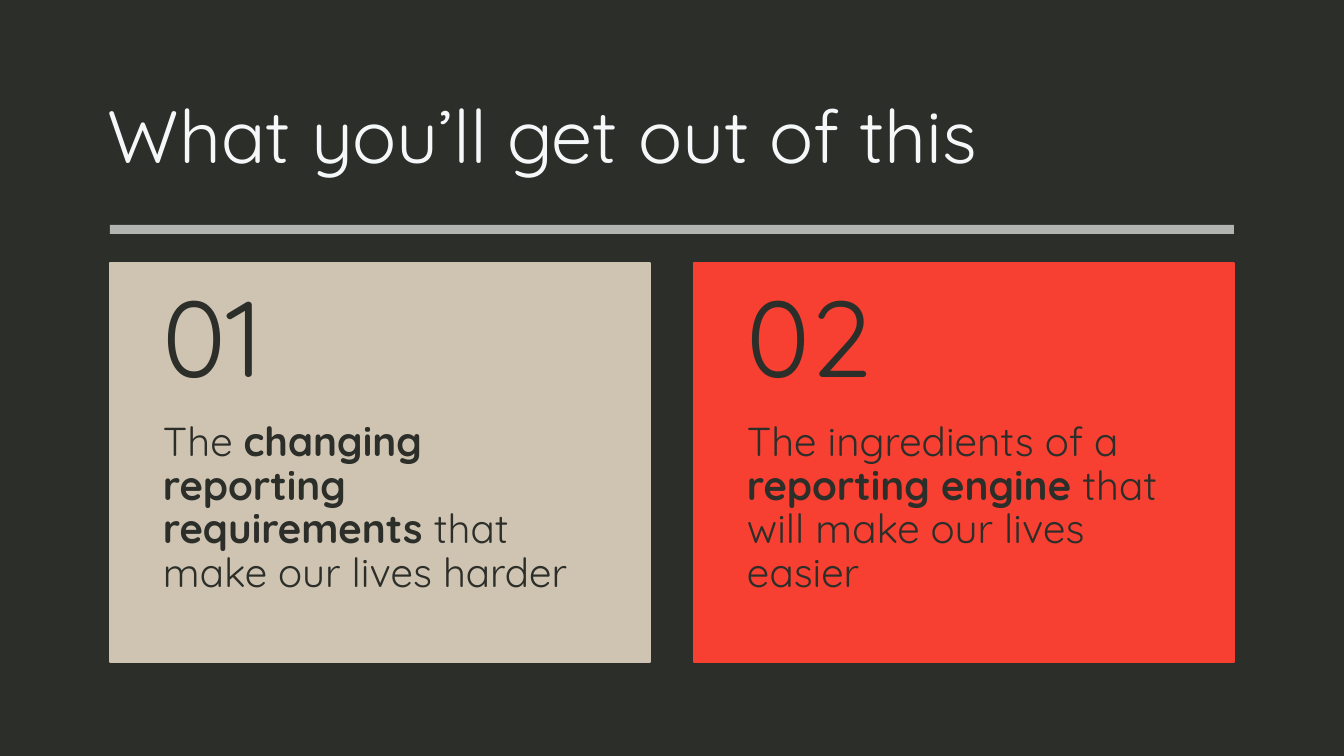
from dataclasses import dataclass

from lxml.etree import SubElement
from pptx import Presentation
from pptx.dml.color import RGBColor
from pptx.enum.shapes import MSO_SHAPE
from pptx.enum.text import MSO_ANCHOR, PP_ALIGN
from pptx.oxml.ns import qn
from pptx.shapes.autoshape import Shape
from pptx.slide import Slide
from pptx.util import Emu, Pt

PX_PER_INCH = 121


@dataclass(frozen=True)
class Theme:
    font: str = "Quicksand"
    dark: str = "2C2E29"
    light: str = "F5F8F9"
    rule: str = "FAFCFC"
    rule_opacity: int = 65
    sand: str = "CFC4B2"
    red: str = "F84032"
    title_size: int = 44
    number_size: int = 64
    body_size: int = 24
    line_spacing: float = 0.9


@dataclass(frozen=True)
class Box:
    left: int
    top: int
    width: int
    height: int


@dataclass(frozen=True)
class Insets:
    left: int
    top: int
    right: int
    bottom: int


@dataclass(frozen=True)
class Words:
    text: str
    bold: bool = False


@dataclass(frozen=True)
class Takeaway:
    number: str
    color: str
    message: tuple[Words, ...]


THEME = Theme()
TITLE_BOX = Box(96, 67, 1153, 146)
RULE_BOX = Box(110, 225, 1124, 9)
FIRST_CARD = Box(110, 263, 540, 399)
CARD_GAP = 44
NUMBER_HEIGHT = 159
TITLE_INSETS = Insets(12, 6, 12, 6)
NUMBER_INSETS = Insets(53, 22, 53, 22)
MESSAGE_INSETS = Insets(53, 0, 53, 44)

TAKEAWAYS = (
    Takeaway("01", THEME.sand, (
        Words("The "),
        Words("changing reporting requirements ", bold=True),
        Words("that make our lives harder"),
    )),
    Takeaway("02", THEME.red, (
        Words("The ingredients of a "),
        Words("reporting engine ", bold=True),
        Words("that will make our lives easier"),
    )),
)


def px(length: int) -> Emu:
    return Emu(round(length * 914400 / PX_PER_INCH))


def edges(box: Box) -> tuple[Emu, Emu, Emu, Emu]:
    return px(box.left), px(box.top), px(box.width), px(box.height)


def add_rectangle(slide: Slide, box: Box, color: str) -> Shape:
    rectangle = slide.shapes.add_shape(MSO_SHAPE.RECTANGLE, *edges(box))
    rectangle.shadow.inherit = False
    rectangle.fill.solid()
    rectangle.fill.fore_color.rgb = RGBColor.from_string(color)
    rectangle.line.fill.background()
    return rectangle


def add_text(slide: Slide, box: Box, insets: Insets, words: tuple[Words, ...],
             size: int, color: str, anchor: MSO_ANCHOR) -> None:
    frame = slide.shapes.add_textbox(*edges(box)).text_frame
    frame.word_wrap = True
    frame.vertical_anchor = anchor
    frame.margin_left, frame.margin_top = px(insets.left), px(insets.top)
    frame.margin_right, frame.margin_bottom = px(insets.right), px(insets.bottom)
    paragraph = frame.paragraphs[0]
    paragraph.alignment = PP_ALIGN.LEFT
    paragraph.line_spacing = THEME.line_spacing
    for part in words:
        run = paragraph.add_run()
        run.text = part.text
        run.font.name = THEME.font
        run.font.size = Pt(size)
        run.font.bold = part.bold
        run.font.color.rgb = RGBColor.from_string(color)


def add_rule(slide: Slide) -> None:
    rule = add_rectangle(slide, RULE_BOX, THEME.rule)
    rule_color = rule.fill._xPr.find(qn("a:solidFill"))[0]
    SubElement(rule_color, qn("a:alpha"), val=str(THEME.rule_opacity * 1000))


def add_card(slide: Slide, box: Box, takeaway: Takeaway) -> None:
    card = add_rectangle(slide, box, takeaway.color)
    card.line.color.rgb = RGBColor.from_string(takeaway.color)
    card.line.width = Pt(1)
    message_box = Box(box.left, box.top + NUMBER_HEIGHT,
                      box.width, box.height - NUMBER_HEIGHT)
    add_text(slide, message_box, MESSAGE_INSETS, takeaway.message,
             THEME.body_size, THEME.dark, MSO_ANCHOR.TOP)
    number_box = Box(box.left, box.top, box.width, NUMBER_HEIGHT)
    add_text(slide, number_box, NUMBER_INSETS, (Words(takeaway.number),),
             THEME.number_size, THEME.dark, MSO_ANCHOR.MIDDLE)


def main() -> None:
    deck = Presentation()
    deck.slide_width, deck.slide_height = px(1344), px(756)
    slide = deck.slides.add_slide(deck.slide_layouts[6])
    slide.background.fill.solid()
    slide.background.fill.fore_color.rgb = RGBColor.from_string(THEME.dark)

    add_text(slide, TITLE_BOX, TITLE_INSETS, (Words("What you’ll get out of this"),),
             THEME.title_size, THEME.light, MSO_ANCHOR.MIDDLE)
    add_rule(slide)
    for column, takeaway in enumerate(TAKEAWAYS):
        left = FIRST_CARD.left + column * (FIRST_CARD.width + CARD_GAP)
        card_box = Box(left, FIRST_CARD.top, FIRST_CARD.width, FIRST_CARD.height)
        add_card(slide, card_box, takeaway)
    deck.save("out.pptx")


if __name__ == "__main__":
    main()
